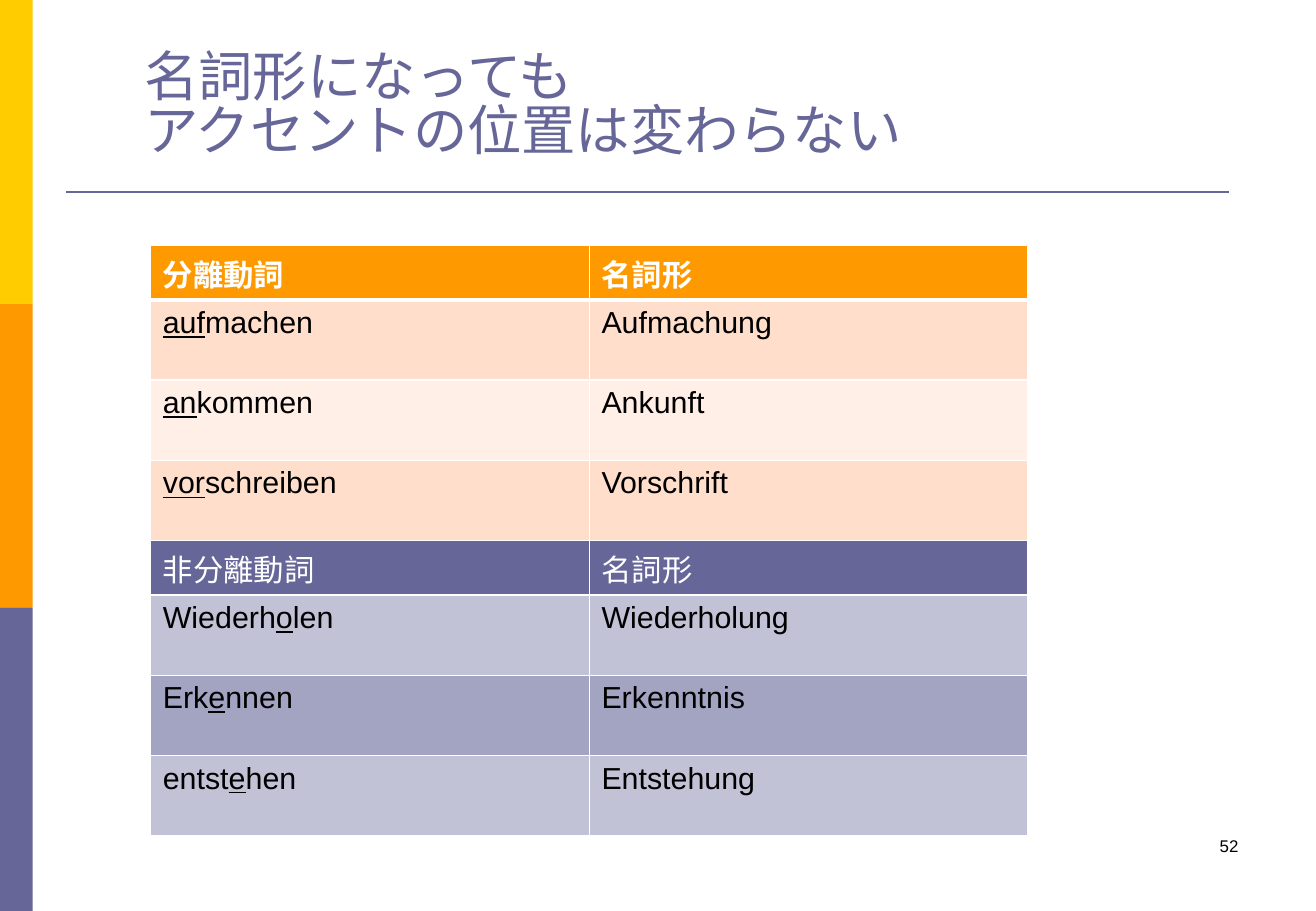
"""Builds a slide on word stress in German verbs and their noun forms."""
from dataclasses import dataclass

from lxml import etree
from pptx import Presentation
from pptx import util as u
from pptx.dml.color import RGBColor
from pptx.enum import shapes, text
from pptx.oxml import ns


@dataclass(frozen=True)
class Theme:
    font: str = "Arial"
    title_size: float = 32.2
    table_size: float = 18
    number_size: float = 10
    yellow: str = "FFCC00"
    orange: str = "FF9900"
    violet: str = "666699"
    peach: str = "FFDECC"
    pale_peach: str = "FFEFE7"
    lilac: str = "C2C2D6"
    deep_lilac: str = "A3A3C2"
    white: str = "FFFFFF"
    black: str = "000000"


THEME = Theme()
HEADER_HEIGHT, WORD_HEIGHT = 0.45, 0.66

SECTIONS = [
    ("分離動詞", THEME.orange, True, (THEME.peach, THEME.pale_peach), [
        (("", "auf", "machen"), "Aufmachung"),
        (("", "an", "kommen"), "Ankunft"),
        (("", "vor", "schreiben"), "Vorschrift"),
    ]),
    ("非分離動詞", THEME.violet, False, (THEME.lilac, THEME.deep_lilac), [
        (("Wiederh", "o", "len"), "Wiederholung"),
        (("Erk", "e", "nnen"), "Erkenntnis"),
        (("entst", "e", "hen"), "Entstehung"),
    ]),
]


def rgb(color):
    return RGBColor.from_string(color)


def add_run(p, words, size, color, bold=False, underline=False):
    r = p.add_run()
    r.text = words
    r.font.name = THEME.font
    r.font.size = u.Pt(size)
    r.font.color.rgb = rgb(color)
    r.font.bold = bold
    r.font.underline = underline


def add_band(s, index, color):
    sp = s.shapes.add_shape(shapes.MSO_SHAPE.RECTANGLE, 0, u.Inches(2.5 * index),
                            u.Inches(0.27), u.Inches(2.5))
    sp.shadow.inherit = False
    sp.fill.solid()
    sp.fill.fore_color.rgb = rgb(color)
    sp.line.fill.background()


def add_rule(s, left, right, top):
    line = s.shapes.add_connector(shapes.MSO_CONNECTOR.STRAIGHT, u.Inches(left),
                                  u.Inches(top), u.Inches(right), u.Inches(top))
    line.line.color.rgb = rgb(THEME.violet)
    line.line.width = u.Pt(1.5)
    etree.SubElement(line._element.spPr, ns.qn("a:effectLst"))


def add_text(s, box, lines, size, color, align, anchor, spacing=1.0):
    sp = s.shapes.add_textbox(*map(u.Inches, box))
    tf = sp.text_frame
    tf.word_wrap = True
    tf.vertical_anchor = anchor
    p = tf.paragraphs[0]
    p.alignment = align
    p.line_spacing = spacing
    for i, line in enumerate(lines):
        if i:
            p.add_line_break()
        add_run(p, line, size, color)
    return tf


def set_borders(cell, top, bottom):
    tc_pr = cell._tc.get_or_add_tcPr()
    for side, width in (("L", 1), ("R", 1), ("T", top), ("B", bottom)):
        ln = etree.SubElement(tc_pr, ns.qn(f"a:ln{side}"), w=str(u.Pt(width)))
        fill = etree.SubElement(ln, ns.qn("a:solidFill"))
        etree.SubElement(fill, ns.qn("a:srgbClr"), val=THEME.white)


def fill_cell(cell, parts, fill, color, bold, top, bottom):
    set_borders(cell, top, bottom)
    cell.fill.solid()
    cell.fill.fore_color.rgb = rgb(fill)
    p = cell.text_frame.paragraphs[0]
    for i, part in enumerate(parts):
        if part:
            add_run(p, part, THEME.table_size, color, bold, underline=i == 1)


def table_rows():
    for heading, fill, bold, bands, words in SECTIONS:
        yield HEADER_HEIGHT, ((heading,), ("名詞形",)), fill, THEME.white, bold
        for i, (verb, noun) in enumerate(words):
            yield WORD_HEIGHT, (verb, (noun,)), bands[i % 2], THEME.black, False


def add_word_table(s):
    rows = list(table_rows())
    height = sum(row[0] for row in rows)
    table = s.shapes.add_table(len(rows), 2, u.Inches(1.24), u.Inches(2.02),
                               u.Inches(7.22), u.Inches(height)).table
    for column in table.columns:
        column.width = u.Inches(3.61)
    for i, (row_height, cells, fill, color, bold) in enumerate(rows):
        table.rows[i].height = u.Inches(row_height)
        top, bottom = 3 if i == 1 else 1, 3 if i == 0 else 1
        for j, parts in enumerate(cells):
            fill_cell(table.cell(i, j), parts, fill, color, bold, top, bottom)


def main():
    prs = Presentation()
    prs.slide_width, prs.slide_height = u.Inches(10.83), u.Inches(7.5)
    s = prs.slides.add_slide(prs.slide_layouts[6])
    for i, color in enumerate((THEME.yellow, THEME.orange, THEME.violet)):
        add_band(s, i, color)
    add_rule(s, 0.54, 10.11, 1.58)
    title = add_text(s, (1.09, 0.15, 8.45, 1.18),
                     ("名詞形になっても", "アクセントの位置は変わらない"),
                     THEME.title_size, THEME.violet, text.PP_ALIGN.LEFT,
                     text.MSO_ANCHOR.BOTTOM, 0.83)
    title.margin_bottom = 0
    add_word_table(s)
    add_text(s, (7.76, 6.83, 2.53, 0.5), ("52",), THEME.number_size, THEME.black,
             text.PP_ALIGN.RIGHT, text.MSO_ANCHOR.TOP)
    prs.save("out.pptx")


if __name__ == "__main__":
    main()
